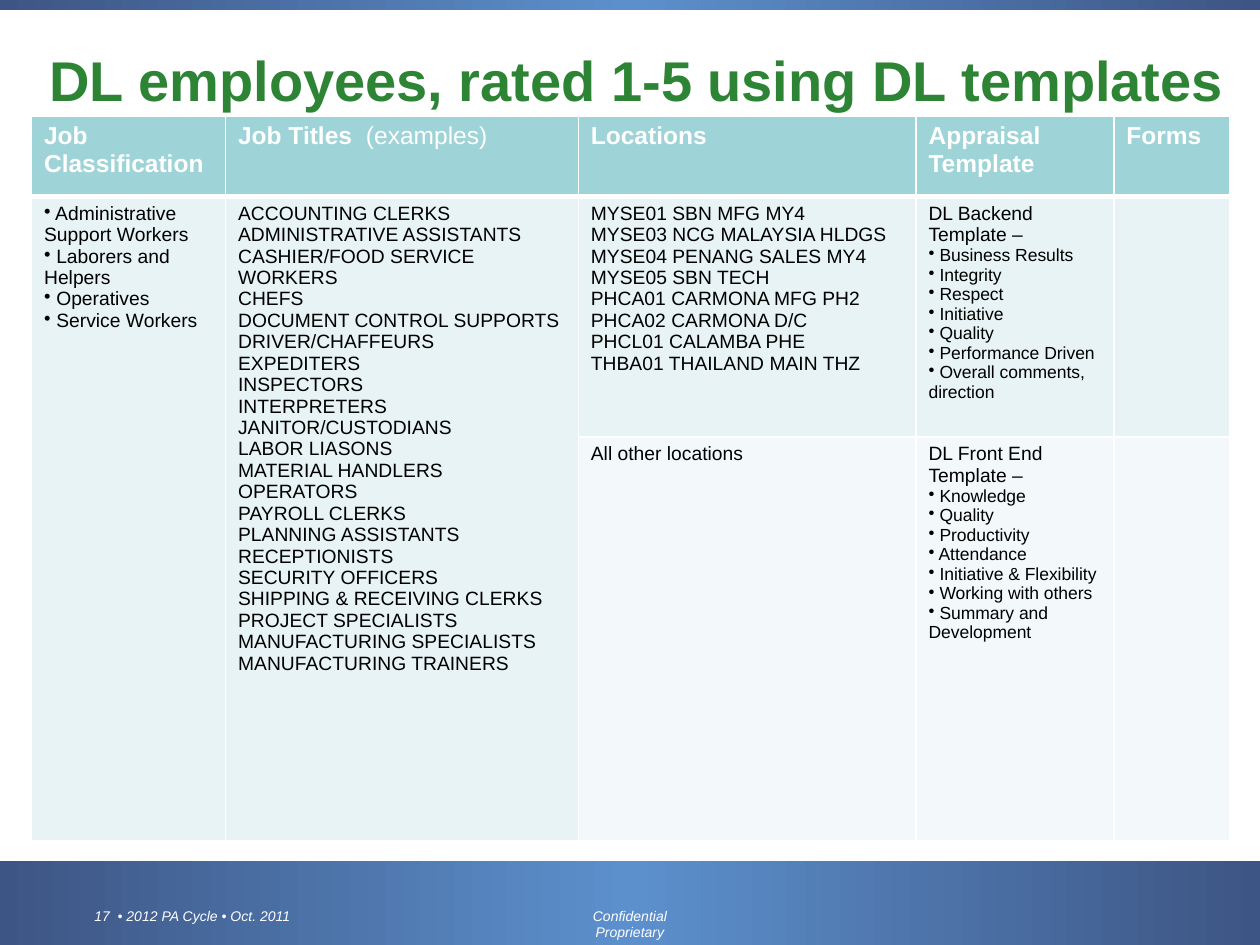
from copy import deepcopy

from lxml.etree import SubElement as Sub
from pptx import Presentation
from pptx.dml.color import RGBColor as RGB
from pptx.enum.shapes import MSO_SHAPE as Shape
from pptx.enum.text import MSO_ANCHOR as Anchor, MSO_AUTO_SIZE as Auto, PP_ALIGN as Align
from pptx.oxml.ns import qn
from pptx.util import Inches, Pt

FONT = "Arial"
WHITE = RGB(0xFF, 0xFF, 0xFF)
BLACK = RGB(0, 0, 0)
GREEN = RGB(0x2D, 0x84, 0x35)
NAVY = RGB(0x3D, 0x55, 0x84)
BLUE = RGB(0x5C, 0x90, 0xCC)
TEAL = RGB(0x9E, 0xD3, 0xD7)
MIST = RGB(0xE7, 0xF3, 0xF4)
PALE = RGB(0xF3, 0xF9, 0xFA)

COLS = (1.54, 2.8, 2.68, 1.57, 0.92)
ROWS = (0.64, 1.91, 3.2)
FILLS = (TEAL, MIST, PALE)
HEADS = ("Job Classification", "Job Titles  ", "Locations", "Appraisal Template", "Forms")
JOBS = ("Administrative Support Workers", "Laborers and Helpers", "Operatives",
        "Service Workers")
TITLES = ("ACCOUNTING CLERKS", "ADMINISTRATIVE ASSISTANTS",
          "CASHIER/FOOD SERVICE WORKERS", "CHEFS", "DOCUMENT CONTROL SUPPORTS",
          "DRIVER/CHAFFEURS", "EXPEDITERS", "INSPECTORS", "INTERPRETERS",
          "JANITOR/CUSTODIANS", "LABOR LIASONS", "MATERIAL HANDLERS", "OPERATORS",
          "PAYROLL CLERKS", "PLANNING ASSISTANTS", "RECEPTIONISTS",
          "SECURITY OFFICERS", "SHIPPING & RECEIVING CLERKS", "PROJECT SPECIALISTS",
          "MANUFACTURING SPECIALISTS", "MANUFACTURING TRAINERS")
SITES = ("MYSE01 SBN MFG MY4", "MYSE03 NCG MALAYSIA HLDGS",
         "MYSE04 PENANG SALES MY4", "MYSE05 SBN TECH", "PHCA01 CARMONA MFG PH2",
         "PHCA02 CARMONA D/C", "PHCL01 CALAMBA PHE", "THBA01 THAILAND MAIN THZ")
BACK = ("Business Results", "Integrity", "Respect", "Initiative", "Quality",
        "Performance Driven", "Overall comments, direction")
FRONT = ("Knowledge", "Quality", "Productivity", "Attendance",
         "Initiative & Flexibility", "Working with others", "Summary and Development")


def write(para, text, size=11, color=BLACK, bold=False, italic=False):
    """Add a formatted run to a paragraph."""
    run = para.add_run()
    run.text = text
    font = run.font
    font.name, font.size, font.bold, font.italic = FONT, Pt(size), bold, italic
    font.color.rgb = color


def add_lines(frame, lines, bullet=False, size=11):
    """Add one paragraph per line, with bullets if asked."""
    for line in lines:
        para = frame.paragraphs[-1]
        if para.runs:
            para = frame.add_paragraph()
        if bullet:
            props = para._p.get_or_add_pPr()
            props.set("marL", "0")
            props.set("indent", "0")
            Sub(props, qn("a:buChar"), char="•")
        write(para, " " + line if bullet else line, size=size)


def add_label(slide, box, text, align=Align.LEFT, inset=0.1, auto=Auto.NONE, **style):
    """Add a wrapped one-paragraph text box."""
    frame = slide.shapes.add_textbox(*map(Inches, box)).text_frame
    frame.word_wrap, frame.auto_size = True, auto
    frame.margin_left = frame.margin_right = Inches(inset)
    frame.vertical_anchor = Anchor.TOP if auto else Anchor.MIDDLE
    frame.paragraphs[0].alignment = align
    write(frame.paragraphs[0], text, **style)
    return frame


def add_band(slide, top, height):
    """Add a full-width band, lighter in the middle."""
    band = slide.shapes.add_shape(Shape.RECTANGLE, 0, Inches(top), Inches(10), Inches(height))
    band.shadow.inherit = False
    band.line.fill.background()
    band.fill.gradient()
    band.fill.gradient_angle = 0
    for stop in band.fill.gradient_stops:
        stop.color.rgb = NAVY
    first = band._element.spPr.find(".//" + qn("a:gs"))
    first.addnext(deepcopy(first))
    mid = band.fill.gradient_stops[1]
    mid.position, mid.color.rgb = 0.5, BLUE


def add_edges(cell, top, bottom):
    """Draw white borders on the four sides of a cell."""
    props = cell._tc.get_or_add_tcPr()
    for side, width in (("L", 1), ("R", 1), ("T", top), ("B", bottom)):
        line = Sub(props, qn("a:ln" + side), w=str(Pt(width)))
        Sub(Sub(line, qn("a:solidFill")), qn("a:srgbClr"), val=str(WHITE))


def add_grid(slide):
    """Add the table with its sizes, fills and borders."""
    table = slide.shapes.add_table(len(ROWS), len(COLS), Inches(0.25), Inches(0.92),
                                   Inches(sum(COLS)), Inches(sum(ROWS))).table
    for col, width in zip(table.columns, COLS):
        col.width = Inches(width)
    for i, (height, color) in enumerate(zip(ROWS, FILLS)):
        table.rows[i].height = Inches(height)
        for j in range(len(COLS)):
            cell = table.cell(i, j)
            add_edges(cell, 3 if i == 1 else 1, 3 if i == 0 else 1)
            cell.fill.solid()
            cell.fill.fore_color.rgb = color
    for j in range(2):
        table.cell(1, j).merge(table.cell(2, j))
    return table


def fill_grid(table):
    """Write the headings and the body of the table."""
    for j, head in enumerate(HEADS):
        write(table.cell(0, j).text_frame.paragraphs[0], head, size=14, color=WHITE, bold=True)
    write(table.cell(0, 1).text_frame.paragraphs[0], "(examples)", size=14, color=WHITE)
    add_lines(table.cell(1, 0).text_frame, JOBS, bullet=True)
    add_lines(table.cell(1, 1).text_frame, TITLES)
    add_lines(table.cell(1, 2).text_frame, SITES)
    add_lines(table.cell(2, 2).text_frame, ["All other locations"])
    for i, name, items in ((1, "DL Backend Template –", BACK),
                           (2, "DL Front End Template –", FRONT)):
        frame = table.cell(i, 3).text_frame
        add_lines(frame, [name])
        add_lines(frame, items, bullet=True, size=10)


def main():
    """Build the slide and save it."""
    deck = Presentation()
    deck.slide_width, deck.slide_height = Inches(10), Inches(7.5)
    slide = deck.slides.add_slide(deck.slide_layouts[6])
    add_band(slide, 6.83, 0.67)
    foot = dict(auto=Auto.SHAPE_TO_FIT_TEXT, size=8, color=WHITE, italic=True)
    add_label(slide, (0.65, 7.15, 2.66, 0.23), "17  • 2012 PA Cycle • Oct. 2011", **foot)
    add_label(slide, (4.32, 7.15, 1.36, 0.23), "Confidential Proprietary",
              align=Align.CENTER, inset=0.15, **foot)
    add_band(slide, 0, 0.08)
    add_label(slide, (0.08, 0.25, 9.83, 0.75), " DL employees, rated 1-5 using DL templates",
              align=Align.CENTER, size=32, color=GREEN, bold=True)
    fill_grid(add_grid(slide))
    deck.save("out.pptx")


if __name__ == "__main__":
    main()
